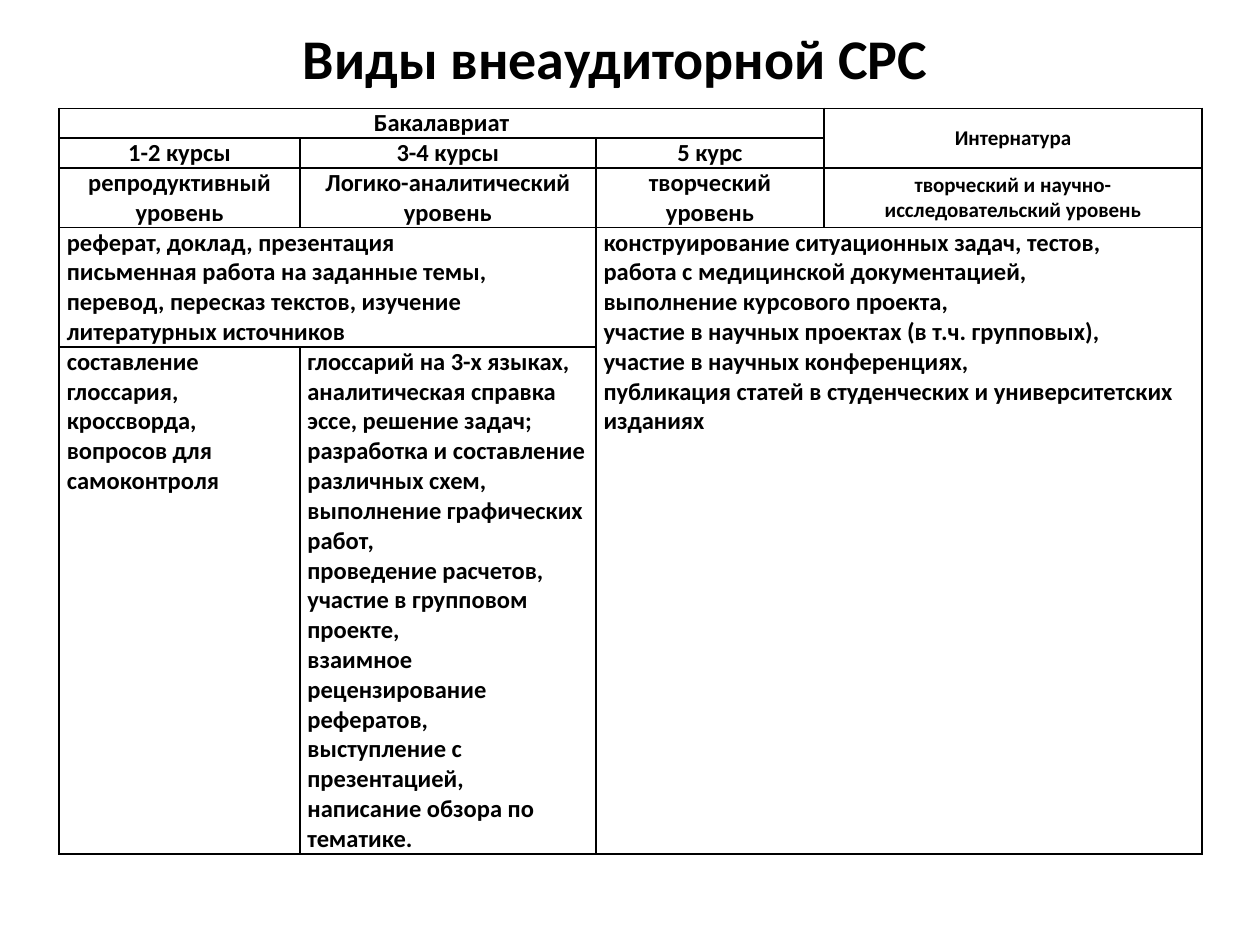
import pptx
import pptx.util
import pptx.dml.color
import pptx.enum.text
import pptx.oxml
import pptx.oxml.ns

Inches = pptx.util.Inches
Align = pptx.enum.text.PP_ALIGN
Anchor = pptx.enum.text.MSO_ANCHOR
theme = {
    "font": "Calibri",
    "ink": "000000",
    "paper": "FFFFFF",
    "title": 32,
    "body": 14,
    "small": 12,
    "line": 1,
}


def style(para, size, align):
    para.alignment = align
    look = {"name": theme["font"], "size": pptx.util.Pt(theme[size]), "bold": True}
    for run in para.runs:
        for key, value in look.items():
            setattr(run.font, key, value)
        run.font.color.rgb = pptx.dml.color.RGBColor.from_string(theme["ink"])


def border(cell):
    props = cell._tc.get_or_add_tcPr()
    width = pptx.util.Pt(theme["line"])
    for spot, side in enumerate(("lnL", "lnR", "lnT", "lnB")):
        line = pptx.oxml.parse_xml(
            f'<a:{side} {pptx.oxml.ns.nsdecls("a")} w="{width}"><a:solidFill>'
            f'<a:srgbClr val="{theme["ink"]}"/></a:solidFill></a:{side}>'
        )
        props.insert(spot, line)


deck = pptx.Presentation()
deck.slide_width, deck.slide_height = Inches(10), Inches(7.5)
slide = deck.slides.add_slide(deck.slide_layouts[6])

cols = [1.91, 2.35, 1.81, 3]
rows = [0.15, 0.15, 0.3, 0.6, 2.7]
frame = slide.shapes.add_table(
    len(rows), len(cols), Inches(0.47), Inches(0.86), Inches(sum(cols)), Inches(sum(rows))
)
table = frame.table
for key, value in {"first_row": False, "horz_banding": False}.items():
    setattr(table, key, value)
for col, width in zip(table.columns, cols):
    col.width = Inches(width)
for row, height in zip(table.rows, rows):
    row.height = Inches(height)

for top, left, low, right in ((0, 0, 0, 2), (0, 3, 1, 3), (3, 0, 3, 1), (3, 2, 4, 3)):
    table.cell(top, left).merge(table.cell(low, right))

texts = {
    (0, 0): ["Бакалавриат"],
    (0, 3): ["Интернатура"],
    (1, 0): ["1-2 курсы"],
    (1, 1): ["3-4 курсы"],
    (1, 2): ["5 курс"],
    (2, 0): ["репродуктивный уровень"],
    (2, 1): ["Логико-аналитический уровень"],
    (2, 2): ["творческий уровень"],
    (2, 3): ["творческий и научно-исследовательский уровень"],
    (3, 0): [
        "реферат, доклад, презентация",
        "письменная работа на заданные темы,",
        "перевод, пересказ текстов, изучение литературных источников",
    ],
    (3, 2): [
        "конструирование ситуационных задач, тестов,",
        "работа с медицинской документацией,",
        "выполнение курсового проекта,",
        "участие в научных проектах (в т.ч. групповых),",
        "участие в научных конференциях,",
        "публикация статей в студенческих и университетских изданиях",
    ],
    (4, 0): ["составление глоссария,", "кроссворда, вопросов для самоконтроля"],
    (4, 1): [
        "глоссарий на 3-х языках,",
        "аналитическая справка",
        "эссе, решение задач;",
        "разработка и составление различных схем, выполнение графических работ,",
        "проведение расчетов,\vучастие в групповом проекте,",
        "взаимное рецензирование рефератов,",
        "выступление с презентацией,",
        "написание обзора по тематике.",
    ],
}
inset = {
    "margin_left": Inches(0.06),
    "margin_right": Inches(0.06),
    "margin_top": 0,
    "margin_bottom": 0,
}
for row in range(len(rows)):
    for col in range(len(cols)):
        cell = table.cell(row, col)
        for key, value in inset.items():
            setattr(cell, key, value)
        if row == 2:
            cell.fill.solid()
            cell.fill.fore_color.rgb = pptx.dml.color.RGBColor.from_string(theme["paper"])
        else:
            cell.fill.background()
        border(cell)
        if (row, col) not in texts:
            continue
        mid = row == 2 or (row, col) == (0, 3)
        cell.vertical_anchor = Anchor.MIDDLE if mid else Anchor.TOP
        cell.text_frame.text = "\n".join(texts[row, col])
        for para in cell.text_frame.paragraphs:
            size = "small" if col == 3 else "body"
            style(para, size, Align.CENTER if row < 3 else Align.LEFT)

title = slide.shapes.add_textbox(Inches(0.86), Inches(0.13), Inches(8.05), Inches(0.64))
form = {
    "text": "Виды внеаудиторной СРС",
    "word_wrap": True,
    "vertical_anchor": Anchor.MIDDLE,
    "auto_size": pptx.enum.text.MSO_AUTO_SIZE.SHAPE_TO_FIT_TEXT,
}
for key, value in form.items():
    setattr(title.text_frame, key, value)
style(title.text_frame.paragraphs[0], "title", Align.CENTER)

deck.save("out.pptx")
